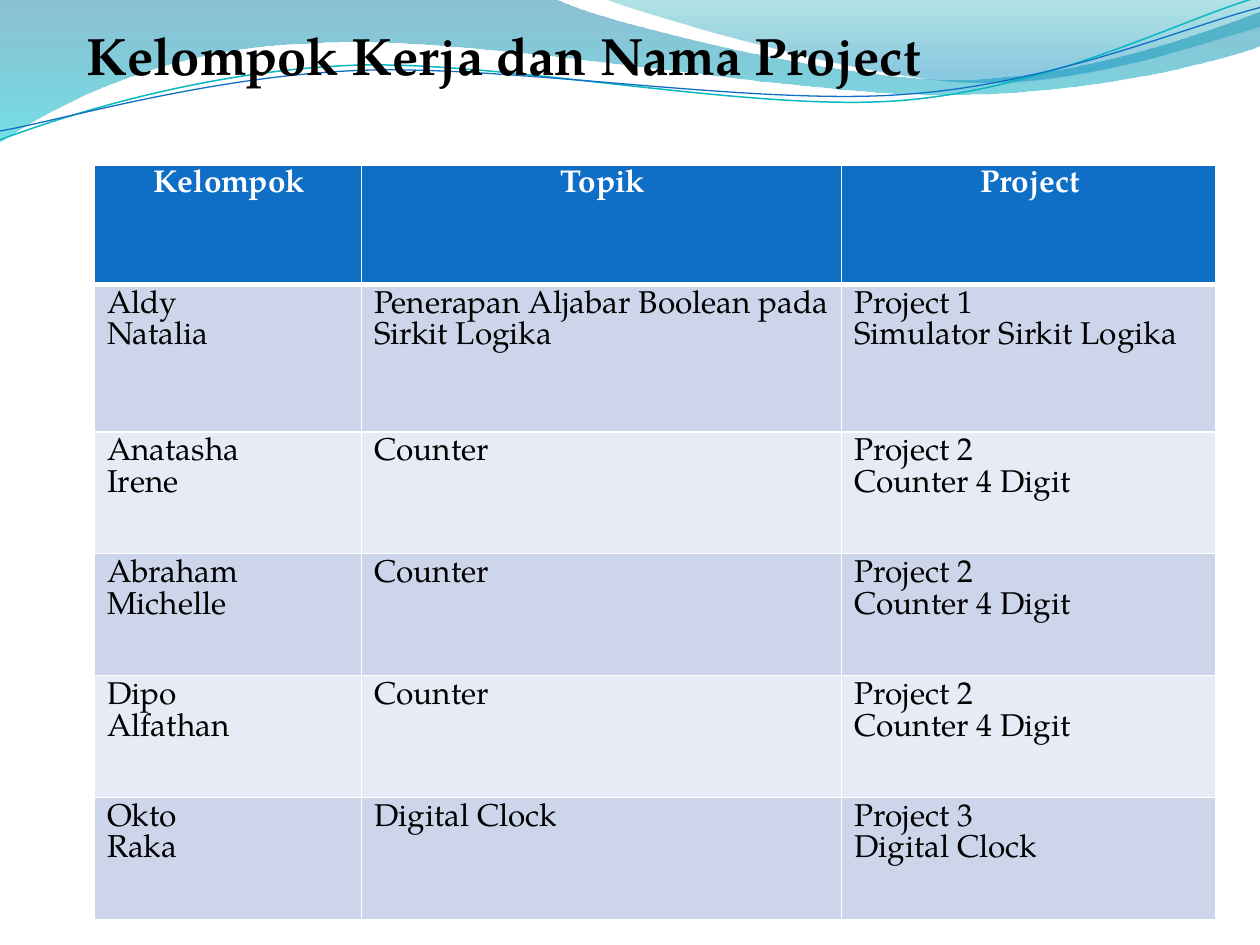
from lxml.etree import SubElement
from pptx import Presentation
from pptx.dml.color import RGBColor as Color
from pptx.enum.text import MSO_ANCHOR as Anchor, MSO_AUTO_SIZE as AutoSize, PP_ALIGN as Align
from pptx.oxml import parse_xml
from pptx.oxml.ns import nsdecls, qn
from pptx.util import Inches, Pt

THEME = {
    "font": "TeX Gyre Pagella", "title_size": 30, "table_size": 18,
    "ink": "000000", "white": "FFFFFF", "header": "0F6FC6",
    "bands": ("CCD5EA", "E7EBF5"),
}
UNITS_PER_INCH = 100
TITLE = "Kelompok Kerja dan Nama Project"
COLUMN_SHARES = (0.212, 0.381, 0.297)
ROW_SHARES = (0.126, 0.156, 0.129, 0.129, 0.129, 0.129)
ROWS = [
    ("Kelompok", "Topik", "Project"),
    ("Aldy\nNatalia", "Penerapan Aljabar Boolean pada Sirkit Logika",
     "Project 1\nSimulator Sirkit Logika"),
    ("Anatasha\nIrene", "Counter", "Project 2\nCounter 4 Digit"),
    ("Abraham\nMichelle", "Counter", "Project 2\nCounter 4 Digit"),
    ("Dipo\nAlfathan", "Counter", "Project 2\nCounter 4 Digit"),
    ("Okto\nRaka", "Digital Clock", "Project 3\nDigital Clock"),
]
WAVES = [
    {"start": (0, 0), "stops": [(0, "0074A1", 45), (1, "00C6CF", 55)],
     "steps": [(4.4, -0.01), (4.76, 0.17, 6.64, 0.63, 7.58, 0.63),
               (8.53, 0.63, 9.58, 0.26, 10, 0.09), (10.01, 0.36),
               (9.83, 0.44, 8.7, 0.76, 7.46, 0.75),
               (6.22, 0.75, 3.82, 0.28, 2.57, 0.34),
               (1.29, 0.36, 0.46, 0.83, -0.01, 1.13)]},
    {"start": (4.79, -0.01), "stops": [(0, "00A1A9", 30), (0.8, "008BBF", 45)],
     "steps": [(5.09, 0.11, 6.82, 0.62, 7.69, 0.65),
               (8.56, 0.69, 9.61, 0.32, 10, 0.21), (10, 0)]},
    {"start": (0, 1.11), "line": ("0AB8BF", 0.85),
     "steps": [(0.48, 0.93, 1.58, 0.57, 2.77, 0.52),
               (3.95, 0.47, 5.93, 0.89, 7.13, 0.8),
               (8.33, 0.71, 9.38, 0.15, 9.98, -0.02)]},
    {"start": (0, 1.04), "line": ("0F6FC6", 0.75),
     "steps": [(0.47, 0.96, 1.64, 0.61, 2.83, 0.56),
               (4.03, 0.51, 5.97, 0.84, 7.17, 0.75),
               (8.36, 0.67, 9.41, 0.21, 10, 0.06)]},
]


def add_wave(page, start, steps, closed):
    numbers = [round(n * UNITS_PER_INCH) for step in (start, *steps) for n in step]
    points = list(zip(numbers[::2], numbers[1::2]))
    builder = page.shapes.build_freeform(*points[0], scale=Inches(1) / UNITS_PER_INCH)
    builder.add_line_segments(points[1:], close=closed)
    shape = builder.convert_to_shape()
    segments = iter(list(shape.element.iter(qn("a:lnTo"))))
    for step in steps:
        segment = next(segments)
        if len(step) == 6:
            segment.addprevious(parse_xml(f'<a:cubicBezTo {nsdecls("a")}/>'))
            curve = segment.getprevious()
            for part in (segment, next(segments), next(segments)):
                curve.append(part[0])
                part.getparent().remove(part)
    return shape


def style_text(frame, formats, color, **settings):
    for para in frame.paragraphs:
        for name, value in settings.items():
            setattr(para, name, value)
        for span in para.runs:
            for name, value in formats.items():
                setattr(span.font, name, value)
            span.font.color.rgb = Color.from_string(color)


deck = Presentation()
deck.slide_width, deck.slide_height = Inches(10), Inches(7.5)
width, height = deck.slide_width, deck.slide_height
page = deck.slides.add_slide(deck.slide_layouts[5])

for wave in WAVES:
    shape = add_wave(page, wave["start"], wave["steps"], "stops" in wave)
    shape.shadow.inherit = False
    if "stops" in wave:
        shape.line.fill.background()
        shape.fill.gradient()
        shape.fill.gradient_angle = 270
        for stop, (position, color, opacity) in zip(shape.fill.gradient_stops, wave["stops"]):
            stop.position = position
            stop.color.rgb = Color.from_string(color)
        tints = shape.element.spPr.iter(qn("a:srgbClr"))
        for tint, (position, color, opacity) in zip(tints, wave["stops"]):
            SubElement(tint, qn("a:alpha"), val=str(opacity * 1000))
    else:
        color, weight = wave["line"]
        shape.fill.background()
        shape.line.color.rgb = Color.from_string(color)
        shape.line.width = Pt(weight)

title = page.shapes.title
page.shapes.element.append(title.element)
placement = {"left": 0.059 * width, "top": 0.017 * height,
             "width": 0.955 * width, "height": 0.081 * height}
for name, value in placement.items():
    setattr(title, name, int(value))
title.text_frame.text = TITLE
frame_formats = {"word_wrap": True, "auto_size": AutoSize.NONE,
                 "vertical_anchor": Anchor.MIDDLE}
for name, value in frame_formats.items():
    setattr(title.text_frame, name, value)
style_text(title.text_frame,
           {"name": THEME["font"], "size": Pt(THEME["title_size"]), "bold": True},
           THEME["ink"], alignment=Align.LEFT)

table = page.shapes.add_table(
    len(ROWS), len(COLUMN_SHARES), int(0.075 * width), int(0.175 * height),
    int(sum(COLUMN_SHARES) * width), int(sum(ROW_SHARES) * height)).table
for column, share in zip(table.columns, COLUMN_SHARES):
    column.width = int(share * width)
for row, share in zip(table.rows, ROW_SHARES):
    row.height = int(share * height)

for row_index, texts in enumerate(ROWS):
    is_header = row_index == 0
    fill = THEME["header"] if is_header else THEME["bands"][(row_index - 1) % 2]
    weights = {"L": 1, "R": 1, "T": 3 if row_index == 1 else 1, "B": 3 if is_header else 1}
    for column_index, text in enumerate(texts):
        cell = table.cell(row_index, column_index)
        cell.text = text
        cell.margin_left, cell.margin_right = Inches(0.1), Inches(0.08)
        cell.margin_top = Inches(0.03 if is_header else 0.05)
        cell.fill.solid()
        cell.fill.fore_color.rgb = Color.from_string(fill)
        style_text(cell.text_frame,
                   {"name": THEME["font"], "size": Pt(THEME["table_size"]), "bold": is_header},
                   THEME["white"] if is_header else THEME["ink"],
                   alignment=Align.CENTER if is_header else Align.LEFT,
                   line_spacing=Pt(THEME["table_size"]))
        properties = cell._tc.get_or_add_tcPr()
        for order, (side, weight) in enumerate(weights.items()):
            properties.insert(order, parse_xml(
                f'<a:ln{side} {nsdecls("a")} w="{Pt(weight)}"><a:solidFill>'
                f'<a:srgbClr val="{THEME["white"]}"/></a:solidFill></a:ln{side}>'))

deck.save("out.pptx")
